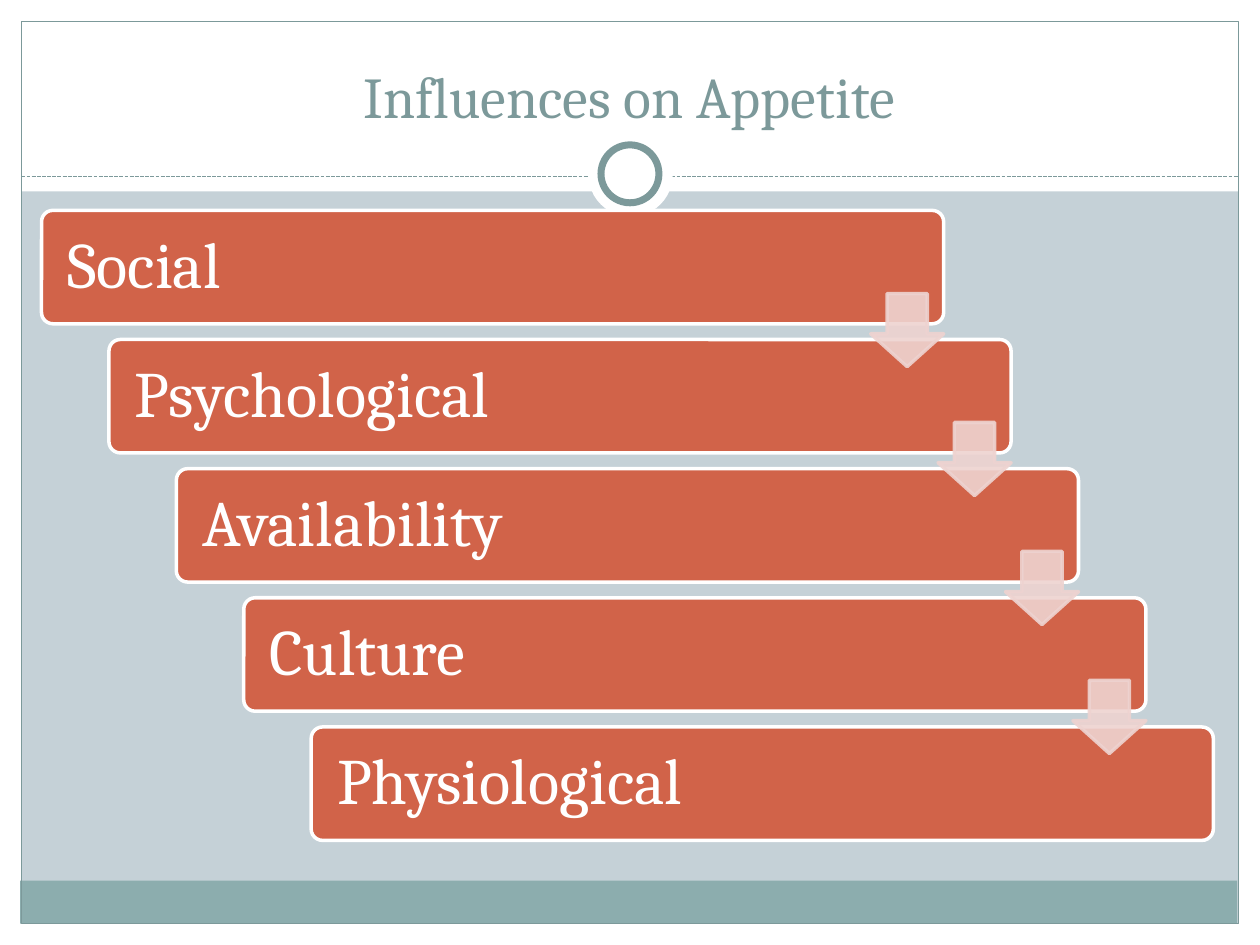
"""Build the slide on influences on appetite, a staircase of five linked bars."""

import dataclasses
import typing

import lxml.etree
import pptx
import pptx.dml.color
import pptx.enum.dml
import pptx.enum.shapes
import pptx.enum.text
import pptx.oxml.ns
import pptx.util

Inches = pptx.util.Inches
Pt = pptx.util.Pt
RGBColor = pptx.dml.color.RGBColor
Kind = pptx.enum.shapes.MSO_SHAPE
Color = typing.Optional[RGBColor]

WHITE = RGBColor(0xFF, 0xFF, 0xFF)
MIST = RGBColor(0xC5, 0xD1, 0xD7)
TEAL = RGBColor(0x8C, 0xAD, 0xAE)
SLATE = RGBColor(0x7C, 0x99, 0x9A)
RUST = RGBColor(0xD1, 0x63, 0x49)
BLUSH = RGBColor(0xEE, 0xD3, 0xD0)
FONT = "Cambria"
INFLUENCES = ["Social", "Psychological", "Availability", "Culture", "Physiological"]
STEP_X = (2.47 - 0.33) / 4
STEP_Y = (5.77 - 1.67) / 4
ARROW_STEP_Y = (5.4 - 2.33) / 3


@dataclasses.dataclass
class Item:
    kind: Kind
    left: float
    top: float
    width: float
    height: float
    fill: Color = None
    line: Color = None
    weight: float = 0.75
    adjustments: tuple[float, ...] = ()


FRAME = [
    Item(Kind.RECTANGLE, 0, 7.33, 10, 0.17, WHITE),
    Item(Kind.RECTANGLE, 0, 0, 10, 1.52, WHITE),
    Item(Kind.RECTANGLE, 0, 0, 0.17, 7.5, WHITE),
    Item(Kind.RECTANGLE, 9.83, 0, 0.17, 7.5, WHITE),
    Item(Kind.RECTANGLE, 0.16, 6.99, 9.66, 0.34, TEAL),
    Item(Kind.RECTANGLE, 0.17, 0.17, 9.66, 7.16, None, SLATE),
]
RINGS = [
    Item(Kind.OVAL, 4.67, 1.05, 0.67, 0.67, WHITE),
    Item(Kind.OVAL, 4.77, 1.15, 0.46, 0.46, WHITE, SLATE, 4),
]


def draw(shapes, item: Item):
    box = [Inches(length) for length in (item.left, item.top, item.width, item.height)]
    shape = shapes.add_shape(item.kind, *box)
    shape.shadow.inherit = False
    for index, value in enumerate(item.adjustments):
        shape.adjustments[index] = value
    if item.fill is None:
        shape.fill.background()
    else:
        shape.fill.solid()
        shape.fill.fore_color.rgb = item.fill
    if item.line is None:
        shape.line.fill.background()
    else:
        shape.line.color.rgb = item.line
        shape.line.width = Pt(item.weight)
    return shape


def draw_divider(shapes) -> None:
    divider = shapes.add_connector(
        pptx.enum.shapes.MSO_CONNECTOR.STRAIGHT,
        Inches(0.17), Inches(1.4), Inches(9.83), Inches(1.4),
    )
    divider.line.color.rgb = SLATE
    divider.line.width = Pt(0.75)
    divider.line.dash_style = pptx.enum.dml.MSO_LINE.SQUARE_DOT
    properties = divider.element.find(pptx.oxml.ns.qn("p:spPr"))
    lxml.etree.SubElement(properties, pptx.oxml.ns.qn("a:effectLst"))


def style(paragraph, size: float, color: RGBColor, alignment) -> None:
    paragraph.alignment = alignment
    paragraph.font.name = FONT
    paragraph.font.size = Pt(size)
    paragraph.font.color.rgb = color


def draw_bar(shapes, index: int, name: str) -> None:
    bar = draw(shapes, Item(
        Kind.ROUNDED_RECTANGLE, 0.33 + index * STEP_X, 1.67 + index * STEP_Y,
        7.16, 0.9, RUST, WHITE, 2, (0.1,),
    ))
    frame = bar.text_frame
    frame.text = name
    frame.word_wrap = True
    frame.vertical_anchor = pptx.enum.text.MSO_ANCHOR.MIDDLE
    frame.margin_left = Inches(0.18)
    frame.margin_top = frame.margin_right = frame.margin_bottom = Inches(0.15)
    paragraph = frame.paragraphs[0]
    paragraph.line_spacing = 0.9
    style(paragraph, 37, WHITE, pptx.enum.text.PP_ALIGN.LEFT)


def draw_arrow(shapes, index: int) -> None:
    arrow = draw(shapes, Item(
        Kind.DOWN_ARROW, 6.91 + index * STEP_X, 2.33 + index * ARROW_STEP_Y,
        0.58, 0.58, BLUSH, BLUSH, 2, (0.55, 0.45),
    ))
    properties = arrow.element.find(pptx.oxml.ns.qn("p:spPr"))
    for color in properties.iter(pptx.oxml.ns.qn("a:srgbClr")):
        lxml.etree.SubElement(color, pptx.oxml.ns.qn("a:alpha"), val="90000")


def place_title(page) -> None:
    title = page.shapes.title
    title.left, title.top = Inches(0.33), Inches(0.25)
    title.width, title.height = Inches(9.33), Inches(0.83)
    title.text_frame.text = "Influences on Appetite"
    title.text_frame.vertical_anchor = pptx.enum.text.MSO_ANCHOR.BOTTOM
    style(title.text_frame.paragraphs[0], 33, SLATE, pptx.enum.text.PP_ALIGN.CENTER)
    page.shapes.element.append(title.element)


def main() -> None:
    deck = pptx.Presentation()
    deck.slide_width, deck.slide_height = Inches(10), Inches(7.5)
    page = deck.slides.add_slide(deck.slide_layouts.get_by_name("Title Only"))
    page.background.fill.solid()
    page.background.fill.fore_color.rgb = MIST
    for item in FRAME:
        draw(page.shapes, item)
    draw_divider(page.shapes)
    for item in RINGS:
        draw(page.shapes, item)
    place_title(page)
    staircase = page.shapes.add_group_shape().shapes
    for index, name in enumerate(INFLUENCES):
        draw_bar(staircase, index, name)
    for index in range(len(INFLUENCES) - 1):
        draw_arrow(staircase, index)
    deck.save("out.pptx")


if __name__ == "__main__":
    main()
